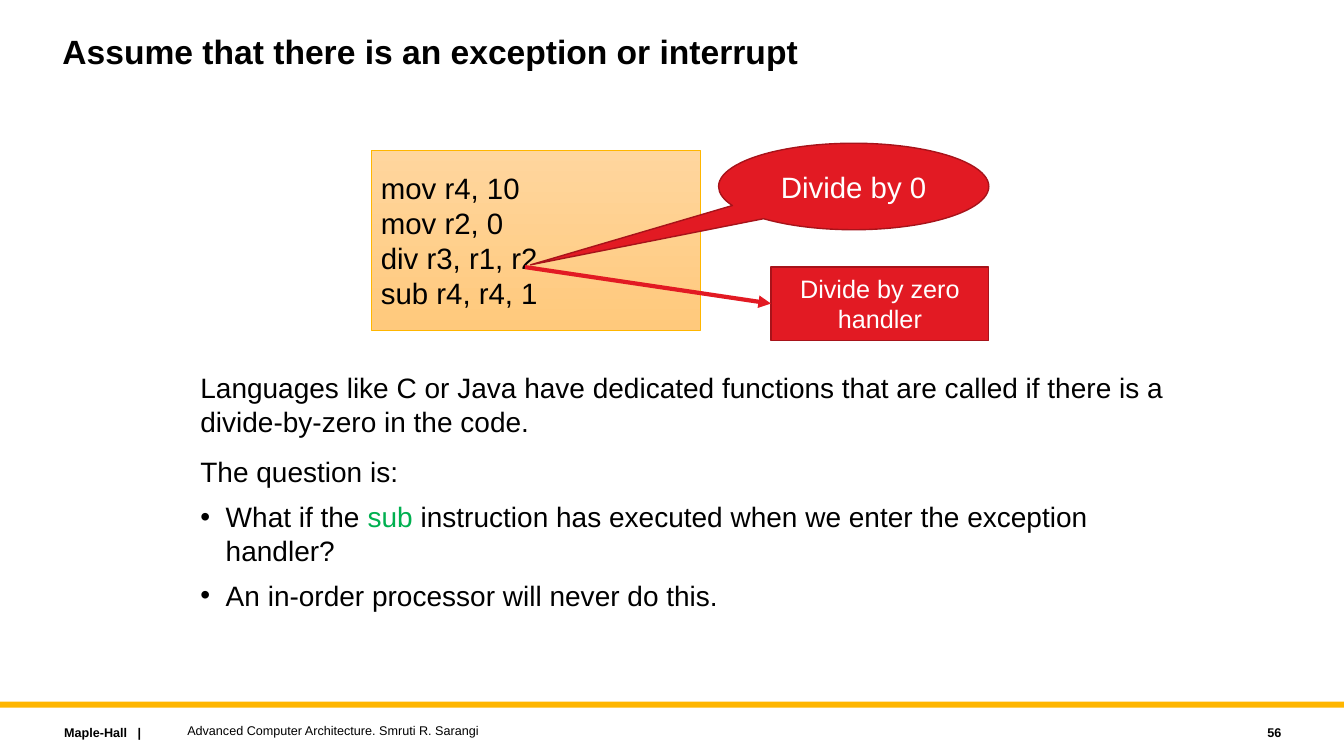
from lxml import etree
from pptx import Presentation
from pptx.dml.color import RGBColor
from pptx.enum.shapes import MSO_CONNECTOR, MSO_SHAPE
from pptx.enum.text import MSO_ANCHOR, PP_ALIGN
from pptx.oxml.ns import qn
from pptx.util import Cm, Pt

LEFT, CENTER, RIGHT = PP_ALIGN.LEFT, PP_ALIGN.CENTER, PP_ALIGN.RIGHT
TOP, MIDDLE = MSO_ANCHOR.TOP, MSO_ANCHOR.MIDDLE
RECTANGLE, CALLOUT = MSO_SHAPE.RECTANGLE, MSO_SHAPE.OVAL_CALLOUT
STRAIGHT = MSO_CONNECTOR.STRAIGHT

BLACK = RGBColor(0x00, 0x00, 0x00)
WHITE = RGBColor(0xFF, 0xFF, 0xFF)
GOLD = RGBColor(0xFF, 0xB6, 0x00)
LIGHT_ORANGE = RGBColor(0xFF, 0xD6, 0x9E)
ORANGE = RGBColor(0xFF, 0xC9, 0x7C)
RED = RGBColor(0xE2, 0x1A, 0x23)
DARK_RED = RGBColor(0xA7, 0x13, 0x1A)
GREEN = RGBColor(0x00, 0xB0, 0x50)


def write(part, lines, size, color=BLACK, bold=False, align=LEFT, anchor=MIDDLE):
    """Fill a part with one paragraph per line."""
    frame = part.text_frame
    frame.word_wrap = True
    frame.vertical_anchor = anchor
    for index, line in enumerate(lines):
        paragraph = frame.paragraphs[0] if index == 0 else frame.add_paragraph()
        paragraph.alignment = align
        run = paragraph.add_run()
        run.text = line
        font_format = {"name": "Arial", "size": Pt(size), "bold": bold}
        for key, value in font_format.items():
            setattr(run.font, key, value)
        run.font.color.rgb = color


def add_box(kind, left, top, width, height, line_color, line_width):
    """Add a preset shape without a shadow."""
    box = slide.shapes.add_shape(kind, Cm(left), Cm(top), Cm(width), Cm(height))
    box.shadow.inherit = False
    box.line.color.rgb = line_color
    box.line.width = Pt(line_width)
    return box


prs = Presentation()
prs.slide_width, prs.slide_height = Cm(33.87), Cm(19.05)
slide = prs.slides.add_slide(prs.slide_layouts[5])

# Title
title = slide.shapes.title
title_place = {"left": Cm(1.32), "top": Cm(0.76), "width": Cm(25.4), "height": Cm(2.29)}
for key, value in title_place.items():
    setattr(title, key, value)
write(title, ["Assume that there is an exception or interrupt"], 24, bold=True, anchor=TOP)
title.text_frame.paragraphs[0].line_spacing = 0.9

# Footer band and texts
band = add_box(RECTANGLE, 0, 17.68, 33.87, 0.15, GOLD, 0)
band.fill.solid()
band.fill.fore_color.rgb = GOLD
band.line.fill.background()

footers = [
    ("Maple-Hall   |", 1.37, 18.14, 5.77, True, LEFT),
    ("Advanced Computer Architecture. Smruti R. Sarangi", 4.47, 18.08, 20.32, False, LEFT),
    ("56", 28.98, 18.14, 3.56, True, RIGHT),
]
for text, left, top, width, bold, align in footers:
    footer = slide.shapes.add_textbox(Cm(left), Cm(top), Cm(width), Cm(0.64))
    write(footer, [text], 9, bold=bold, align=align)

# Explanation with two bullets
explanation = slide.shapes.add_textbox(Cm(4.8), Cm(9.22), Cm(24.84), Cm(6.3))
write(explanation, [
    "Languages like C or Java have dedicated functions that are called "
    "if there is a divide-by-zero in the code.",
    "The question is:",
    "What if the ",
    "An in-order processor will never do this.",
], 20, anchor=TOP)
_, question, sub_bullet, order_bullet = explanation.text_frame.paragraphs
question.space_before = Pt(12)
for bullet in (sub_bullet, order_bullet):
    bullet.space_before = Pt(8)
    properties = bullet._p.get_or_add_pPr()
    properties.set("marL", str(Cm(0.64)))
    properties.set("indent", str(Cm(-0.64)))
    etree.SubElement(properties, qn("a:buFont")).set("typeface", "Arial")
    etree.SubElement(properties, qn("a:buChar")).set("char", "•")
for text, color in [("sub", GREEN),
                    (" instruction has executed when we enter the exception handler?", BLACK)]:
    run = sub_bullet.add_run()
    run.text = text
    run.font.name, run.font.size = "Arial", Pt(20)
    run.font.color.rgb = color

# Assembly code
code = add_box(RECTANGLE, 9.35, 3.78, 8.31, 4.55, GOLD, 0.5)
code.fill.gradient()
code.fill.gradient_angle = 270
for stop, color in zip(code.fill.gradient_stops, (LIGHT_ORANGE, ORANGE)):
    stop.color.rgb = color
write(code, ["mov r4, 10", "mov r2, 0", "div r3, r1, r2", "sub r4, r4, 1"], 21)

# Exception callout and its handler
exception = add_box(CALLOUT, 18.11, 3.61, 6.81, 2.18, DARK_RED, 1)
exception.adjustments[0], exception.adjustments[1] = -1.196, 0.906
handler = add_box(RECTANGLE, 19.43, 6.73, 5.49, 1.85, DARK_RED, 1)
for part, text, size in [(exception, "Divide by 0", 21),
                         (handler, "Divide by zero handler", 18)]:
    part.fill.solid()
    part.fill.fore_color.rgb = RED
    write(part, [text], size, WHITE, align=CENTER)

# Arrow from the division to the handler
jump = slide.shapes.add_connector(STRAIGHT, Cm(13.23), Cm(6.73), Cm(19.43), Cm(7.65))
jump.line.color.rgb = RED
jump.line.width = Pt(3)
etree.SubElement(jump.line._get_or_add_ln(), qn("a:tailEnd")).set("type", "triangle")
etree.SubElement(jump._element.spPr, qn("a:effectLst"))

prs.save("out.pptx")
